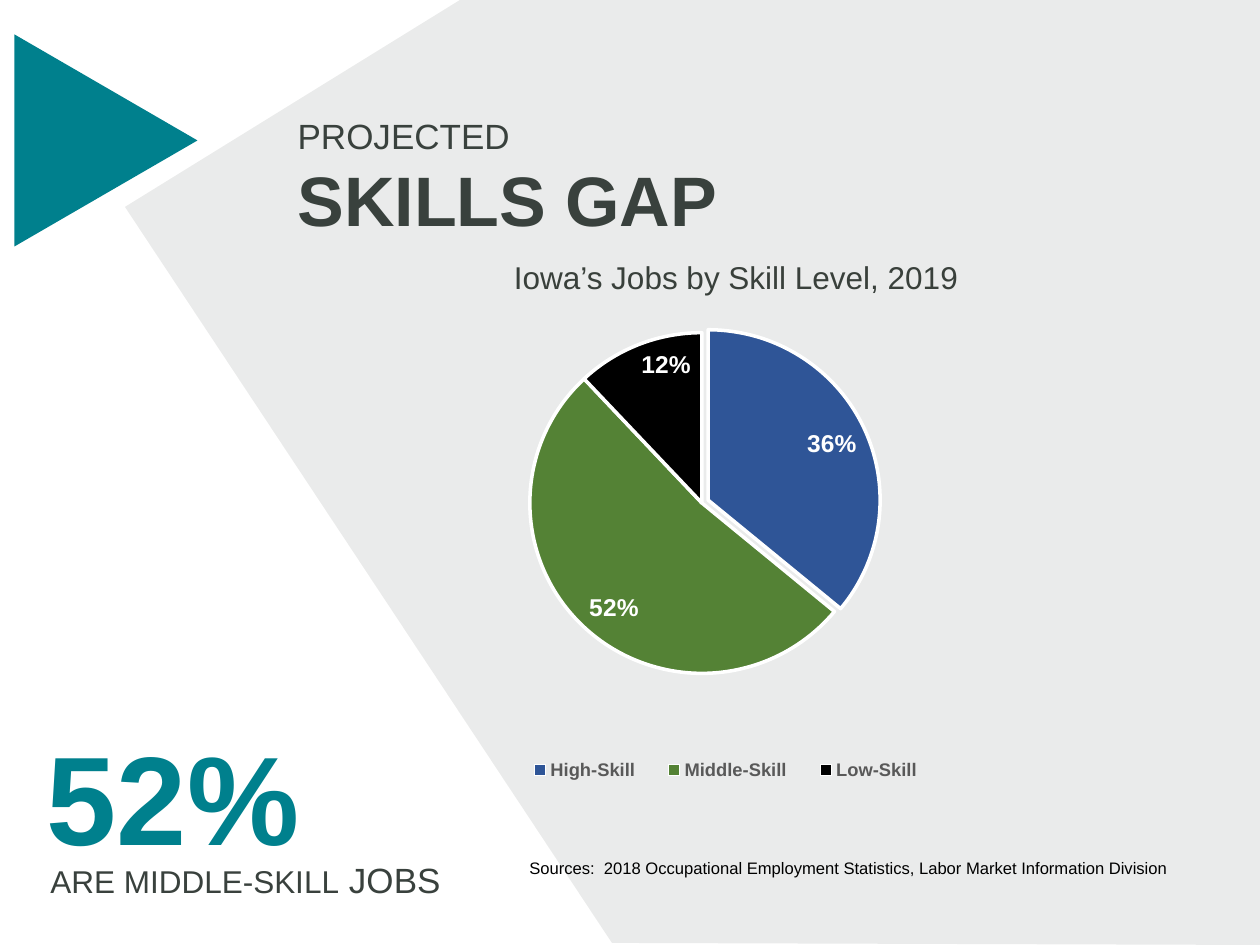
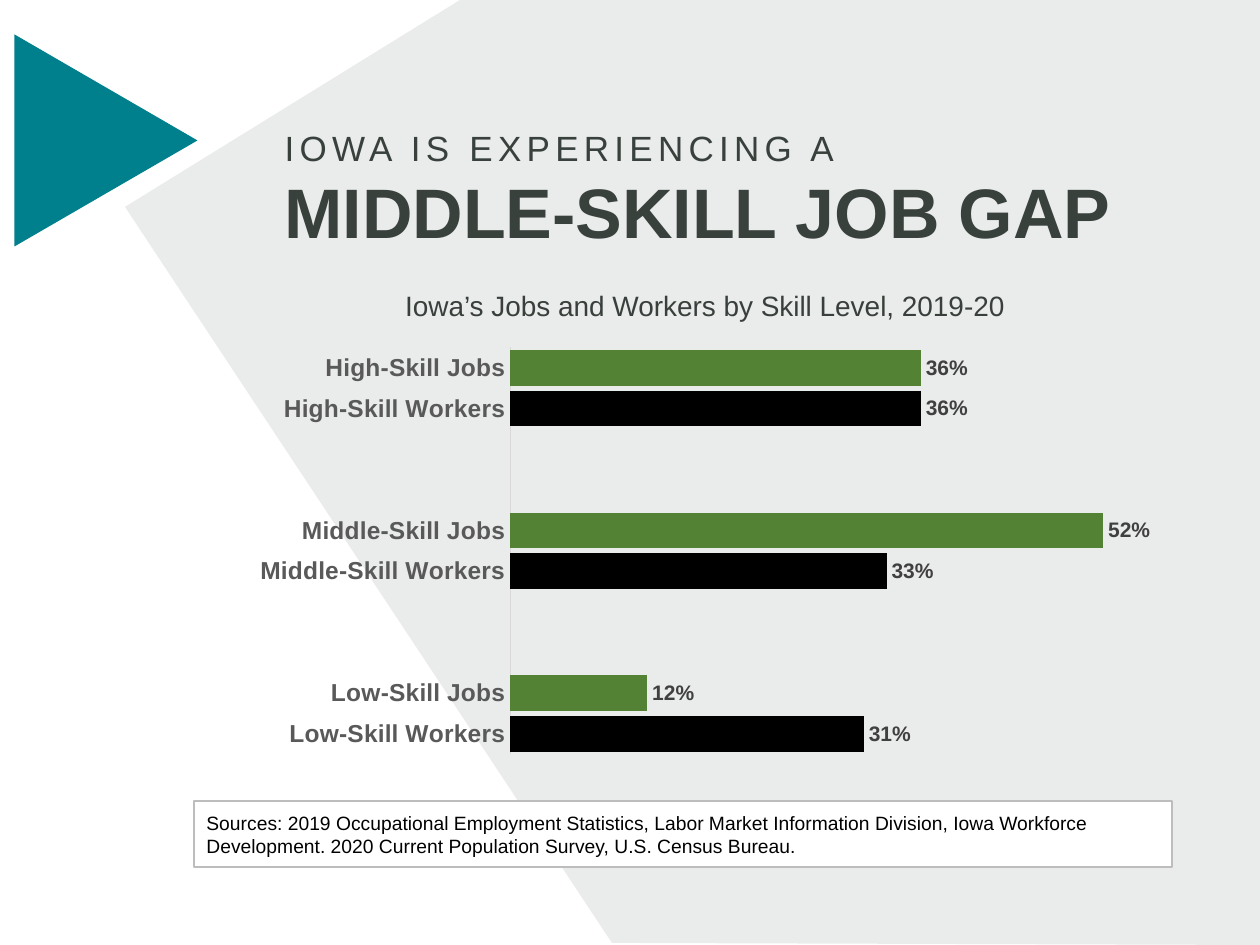
"""Builds two slides on the skills gap in Iowa's labour market."""
from lxml import etree
from pptx import Presentation
from pptx import util as u
from pptx.chart.data import CategoryChartData
from pptx.dml.color import RGBColor
from pptx.enum import chart as ch, shapes, text
from pptx.oxml.ns import qn

PX = 914400 / 126
FONT = "Arial"
SLATE, INK, TEAL, WHITE, BLACK = "39413D", "39403B", "00808D", "FFFFFF", "000000"
BLUE, GREEN, GREY, DARK, RULE, FRAME = "2F5597", "548235", "595959", "404040", "D9D9D9", "BDBDBD"
LEFT, CENTER = text.PP_ALIGN.LEFT, text.PP_ALIGN.CENTER
PANEL = [(460, 0), (125, 207), (612, 943), (1260, 945), (1260, 0)]
TRIANGLE = (0, 49, 212, 183)

PIE = {
    "title": [[("PROJECTED", {"size": 20})], [("SKILLS GAP", {"size": 40, "bold": True})]],
    "title_box": (285, 108, 460, 140),
    "subtitle": "Iowa’s Jobs by Skill Level, 2019",
    "sources": "Sources:  2018 Occupational Employment Statistics, Labor Market Information Division",
    "headline": "52%",
    "caption": [[("ARE MIDDLE-SKILL", {"size": 18}), (" JOBS", {"size": 20})]],
    "shares": [("High-Skill", 0.36, BLUE), ("Middle-Skill", 0.52, GREEN), ("Low-Skill", 0.12, BLACK)],
}
GAP = {
    "title": [[("IOWA IS EXPERIENCING A", {"size": 20, "spacing": 3})],
              [("MIDDLE-SKILL JOB GAP", {"size": 40, "bold": True})]],
    "title_box": (272, 120, 925, 140),
    "subtitle": "Iowa’s Jobs and Workers by Skill Level, 2019-20",
    "sources": "Sources: 2019 Occupational Employment Statistics, Labor Market Information Division, "
               "Iowa Workforce Development. 2020 Current Population Survey, U.S. Census Bureau.",
    "levels": [("Low-Skill", 0.31, 0.12), ("Middle-Skill", 0.33, 0.52), ("High-Skill", 0.36, 0.36)],
}


def rgb(code):
    """Turn a hex string into a colour."""
    return RGBColor.from_string(code)


def emu(*lengths):
    """Turn px lengths into EMU."""
    return [u.Emu(round(length * PX)) for length in lengths]


def fill(part, color):
    """Give a shape or chart part a solid fill."""
    part.fill.solid()
    part.fill.fore_color.rgb = rgb(color)


def outline(line, color, width):
    """Colour a line and set its width in points."""
    line.color.rgb = rgb(color)
    line.width = u.Pt(width)


def style(font, size, color, bold=False):
    """Format a font."""
    font.name, font.size, font.bold = FONT, u.Pt(size), bold
    font.color.rgb = rgb(color)


def write(shape, content, size=18, color=SLATE, bold=False, spacing=0, align=LEFT,
          anchor=text.MSO_ANCHOR.TOP):
    """Write a string, or paragraphs of (words, format) runs, into a shape."""
    frame = shape.text_frame
    frame.word_wrap, frame.auto_size, frame.vertical_anchor = True, text.MSO_AUTO_SIZE.NONE, anchor
    paragraphs = [[(content, {})]] if isinstance(content, str) else content
    for number, runs in enumerate(paragraphs):
        paragraph = frame.add_paragraph() if number else frame.paragraphs[0]
        paragraph.alignment = align
        for words, own in runs:
            run = paragraph.add_run()
            run.text = words
            style(run.font, own.get("size", size), color, own.get("bold", bold))
            run.font._element.set("spc", str(own.get("spacing", spacing) * 100))


def label(container, content, box, **options):
    """Add a text box."""
    write(container.add_textbox(*emu(*box)), content, **options)


def place(parent, index, inner=False, **fractions):
    """Fix the place of a plot area or legend inside its chart."""
    for old in parent.findall(qn("c:layout")):
        parent.remove(old)
    layout = etree.Element(qn("c:layout"))
    parent.insert(index, layout)
    manual = etree.SubElement(layout, qn("c:manualLayout"))
    settings = {"layoutTarget": "inner"} if inner else {}
    settings.update(xMode="edge", yMode="edge", **fractions)
    for tag, value in settings.items():
        etree.SubElement(manual, qn("c:" + tag)).set("val", str(value))


def add_chart(slide, kind, box, names, values):
    """Add a one-series chart and return it with its plot and series."""
    data = CategoryChartData(number_format="0%")
    data.categories = names
    data.add_series("Series 1", values)
    chart = slide.shapes.add_chart(kind, *emu(*box), data).chart
    chart.has_title = chart.has_legend = False
    style(chart.font, 10, BLACK)
    plot = chart.plots[0]
    plot.vary_by_categories = False
    return chart, plot, plot.series[0]


def show_values(series, size, color, position):
    """Show bold percentages on a series."""
    labels = series.data_labels
    labels.show_value, labels.position = True, position
    labels.number_format, labels.number_format_is_linked = "0%", False
    style(labels.font, size, color, True)


def start_slide(prs, content):
    """Add a slide with the shared panel, triangle and title."""
    slide = prs.slides.add_slide(prs.slide_layouts[5])
    builder = slide.shapes.build_freeform(*PANEL[0], scale=PX)
    builder.add_line_segments(PANEL[1:], close=True)
    panel = builder.convert_to_shape()
    triangle = slide.shapes.add_shape(shapes.MSO_SHAPE.ISOSCELES_TRIANGLE, *emu(*TRIANGLE))
    triangle.rotation = 90
    for part, color in ((panel, SLATE), (triangle, TEAL)):
        part.shadow.inherit = False
        fill(part, color)
        part.line.fill.background()
    tint = panel._element.spPr.find(".//" + qn("a:srgbClr"))
    etree.SubElement(tint, qn("a:alpha")).set("val", "10000")
    title = slide.shapes.title
    title.left, title.top, title.width, title.height = emu(*content["title_box"])
    write(title, content["title"])
    slide.shapes._spTree.append(title._element)
    return slide


def build_pie_slide(prs):
    """Build the slide with jobs by skill level."""
    slide = start_slide(prs, PIE)
    label(slide.shapes, PIE["subtitle"], (358, 252, 756, 50), color=INK, align=CENTER)
    label(slide.shapes, PIE["sources"], (517, 852, 712, 67), size=9.5, color=BLACK)
    callout = slide.shapes.add_group_shape().shapes
    label(callout, PIE["headline"], (0, 713, 346, 165), size=72, color=TEAL, bold=True, align=CENTER)
    label(callout, PIE["caption"], (38, 852, 537, 55))

    names, values, colors = zip(*PIE["shares"])
    chart, plot, series = add_chart(slide, ch.XL_CHART_TYPE.PIE, (372, 328, 795, 478), names, values)
    plot.vary_by_categories = True
    place(chart._chartSpace.chart.plotArea, 0, True, x=0, y=0, w=0.83, h=0.72)
    for number, color in enumerate(colors):
        wedge = series.points[number].format
        fill(wedge, color)
        outline(wedge.line, WHITE, 2)
    explosion = etree.Element(qn("c:explosion"))
    explosion.set("val", "4")
    series._element.find(qn("c:dPt")).insert(1, explosion)
    show_values(series, 14, WHITE, ch.XL_LABEL_POSITION.INSIDE_END)
    chart.has_legend = True
    chart.legend.position = ch.XL_LEGEND_POSITION.BOTTOM
    chart.legend.include_in_layout = False
    style(chart.legend.font, 10.5, GREY, True)
    place(chart.legend._element, 1, x=0.17, y=0.89, w=0.55, h=0.07)


def build_gap_slide(prs):
    """Build the slide that compares jobs with workers."""
    slide = start_slide(prs, GAP)
    label(slide.shapes, GAP["subtitle"], (320, 282, 770, 47), size=16, color=INK, align=CENTER)

    bars = []
    for level, workers, jobs in GAP["levels"]:
        if bars:
            bars += [("", None, GREEN)] * 2
        bars += [(level + " Workers", workers, BLACK), (level + " Jobs", jobs, GREEN)]
    names, values, colors = zip(*bars)
    chart, plot, series = add_chart(slide, ch.XL_CHART_TYPE.BAR_CLUSTERED, (194, 260, 1021, 515),
                                    names, values)
    place(chart._chartSpace.chart.plotArea, 0, True, x=0.31, y=0.17, w=0.67, h=0.79)
    plot.gap_width, plot.overlap = 14, 25
    fill(series.format, GREEN)
    series.invert_if_negative = False
    for number, color in enumerate(colors):
        if color == BLACK:
            fill(series.points[number].format, color)
    show_values(series, 12, DARK, ch.XL_LABEL_POSITION.OUTSIDE_END)
    skill, share = chart.category_axis, chart.value_axis
    skill.major_tick_mark = skill.minor_tick_mark = ch.XL_TICK_MARK.NONE
    style(skill.tick_labels.font, 14, GREY, True)
    outline(skill.format.line, RULE, 0.75)
    share.minimum_scale, share.maximum_scale = 0, 0.6
    share.has_major_gridlines = share.visible = False

    sources = slide.shapes.add_shape(shapes.MSO_SHAPE.RECTANGLE, *emu(194, 801, 978, 66))
    sources.shadow.inherit = False
    fill(sources, WHITE)
    outline(sources.line, FRAME, 0.75)
    write(sources, GAP["sources"], size=11, color=BLACK, anchor=text.MSO_ANCHOR.MIDDLE)


def main():
    """Build and save the presentation."""
    prs = Presentation()
    prs.slide_width, prs.slide_height = emu(1260, 945)
    build_pie_slide(prs)
    build_gap_slide(prs)
    prs.save("out.pptx")


if __name__ == "__main__":
    main()
